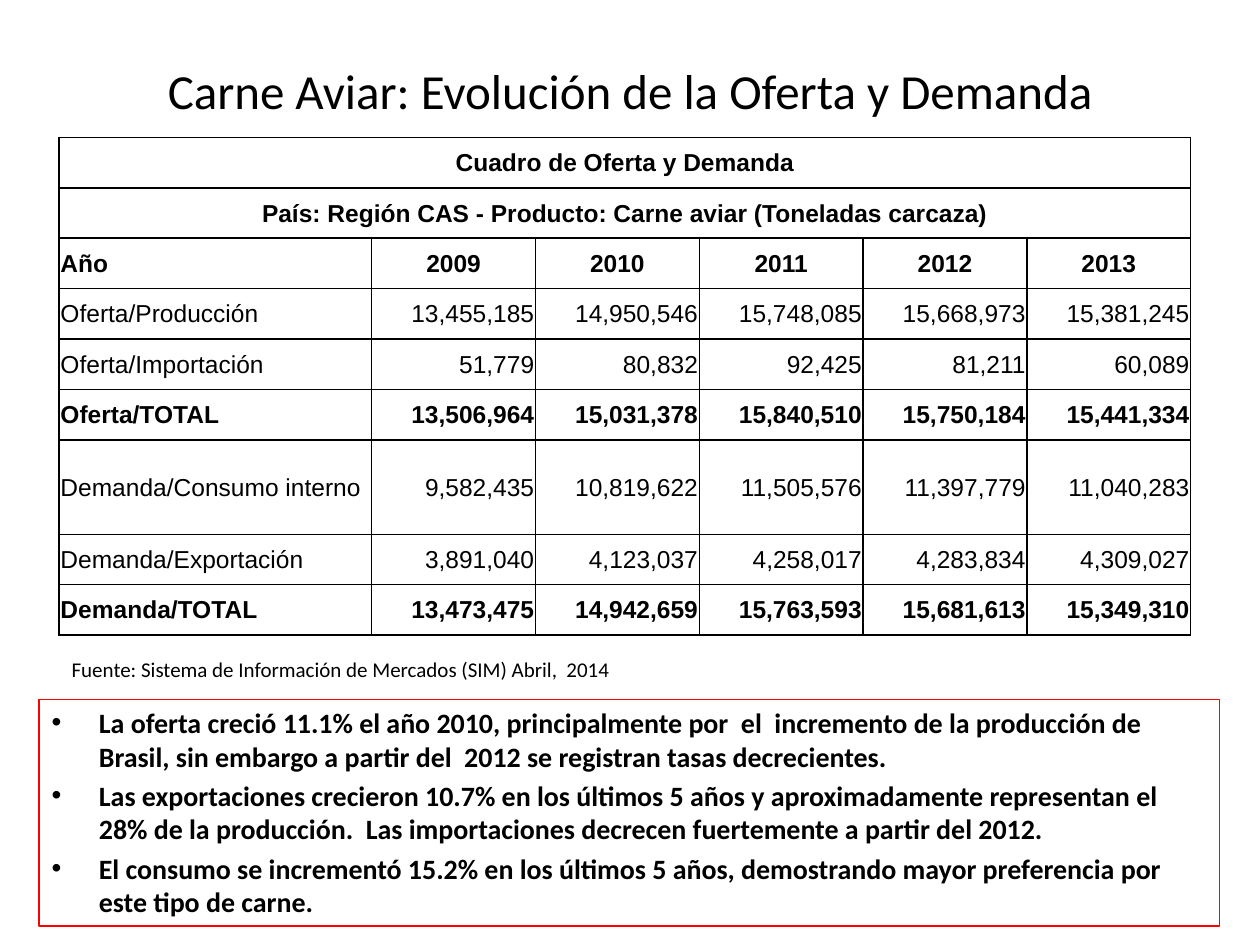
from dataclasses import dataclass

from lxml import etree
from pptx import Presentation
from pptx.dml.color import RGBColor
from pptx.enum.text import MSO_ANCHOR, MSO_AUTO_SIZE, PP_ALIGN
from pptx.oxml.ns import qn
from pptx.util import Inches, Pt

LEFT, CENTER, RIGHT = PP_ALIGN.LEFT, PP_ALIGN.CENTER, PP_ALIGN.RIGHT
MIDDLE = MSO_ANCHOR.MIDDLE
NO_AUTOFIT = MSO_AUTO_SIZE.NONE


@dataclass(frozen=True)
class Theme:
    ink: str = "000000"
    accent: str = "FF0000"
    text_font: str = "Calibri"
    table_font: str = "Arial"
    title_size: int = 28
    body_size: int = 16
    table_size: int = 14
    source_size: int = 12
    border: float = 1
    outline: float = 0.75


THEME = Theme()
TITLE = "Carne Aviar: Evolución de la Oferta y Demanda"
SOURCE = "Fuente: Sistema de Información de Mercados (SIM) Abril,  2014"
FINDINGS = [
    "La oferta creció 11.1% el año 2010, principalmente por  el  incremento de la "
    "producción de Brasil, sin embargo a partir del  2012 se registran tasas decrecientes.",
    "Las exportaciones crecieron 10.7% en los últimos 5 años y aproximadamente representan "
    "el 28% de la producción.  Las importaciones decrecen fuertemente a partir del 2012.",
    "El consumo se incrementó 15.2% en los últimos 5 años, demostrando mayor preferencia "
    "por este tipo de carne.",
]
HEADINGS = [
    "Cuadro de Oferta y Demanda",
    "País: Región CAS - Producto: Carne aviar (Toneladas carcaza)",
]
YEARS = ["Año", 2009, 2010, 2011, 2012, 2013]
SUPPLY_AND_DEMAND = [
    ("Oferta/Producción", 13455185, 14950546, 15748085, 15668973, 15381245),
    ("Oferta/Importación", 51779, 80832, 92425, 81211, 60089),
    ("Oferta/TOTAL", 13506964, 15031378, 15840510, 15750184, 15441334),
    ("Demanda/Consumo interno", 9582435, 10819622, 11505576, 11397779, 11040283),
    ("Demanda/Exportación", 3891040, 4123037, 4258017, 4283834, 4309027),
    ("Demanda/TOTAL", 13473475, 14942659, 15763593, 15681613, 15349310),
]
COLUMN_WIDTHS = [2.48] + [1.3] * 5
ROW_HEIGHTS = [0.4] * 6 + [0.75] + [0.4] * 2
CELL_FORMAT = {
    "margin_left": Inches(0.01),
    "margin_right": Inches(0.01),
    "margin_top": Inches(0.01),
    "margin_bottom": 0,
    "vertical_anchor": MIDDLE,
}


def apply_format(target, values):
    for name, value in values.items():
        setattr(target, name, value)


def place(shape, left, top, width, height):
    box = {"left": left, "top": top, "width": width, "height": height}
    apply_format(shape, {name: Inches(value) for name, value in box.items()})


def write_paragraph(paragraph, text, size, font=THEME.text_font, bold=False, align=None):
    run = paragraph.add_run()
    run.text = text
    apply_format(run.font, {"name": font, "size": Pt(size), "bold": bold})
    run.font.color.rgb = RGBColor.from_string(THEME.ink)
    paragraph.alignment = align


def add_title(slide):
    title = slide.shapes.title
    place(title, 0.5, 0.36, 9, 0.71)
    apply_format(title.text_frame, {"auto_size": NO_AUTOFIT, "vertical_anchor": MIDDLE})
    write_paragraph(title.text_frame.paragraphs[0], TITLE, THEME.title_size, align=CENTER)


def add_findings(slide):
    body = slide.placeholders[1]
    place(body, 0.31, 5.55, 9.37, 1.8)
    body.line.color.rgb = RGBColor.from_string(THEME.accent)
    body.line.width = Pt(THEME.outline)
    frame = body.text_frame
    frame.auto_size = NO_AUTOFIT
    for index, finding in enumerate(FINDINGS):
        paragraph = frame.add_paragraph() if index else frame.paragraphs[0]
        write_paragraph(paragraph, finding, THEME.body_size, bold=True)


def add_source(slide):
    box = slide.shapes.add_textbox(Inches(0.47), Inches(5.16), Inches(8.82), Inches(0.3))
    box.text_frame.word_wrap = True
    write_paragraph(box.text_frame.paragraphs[0], SOURCE, THEME.source_size)


def add_borders(cell):
    properties = cell._tc.get_or_add_tcPr()
    for position, side in enumerate(("a:lnL", "a:lnR", "a:lnT", "a:lnB")):
        line = etree.Element(qn(side), w=str(Pt(THEME.border)))
        fill = etree.SubElement(line, qn("a:solidFill"))
        etree.SubElement(fill, qn("a:srgbClr"), val=THEME.ink)
        properties.insert(position, line)


def write_cell(cell, text, bold, align):
    write_paragraph(cell.text_frame.paragraphs[0], text, THEME.table_size,
                    THEME.table_font, bold, align)


def write_row(table, row, values, bold, align, number_format=""):
    for column, value in enumerate(values):
        text = format(value, number_format) if column else value
        write_cell(table.cell(row, column), text, bold, align if column else LEFT)


def add_supply_table(slide):
    rows, columns = len(ROW_HEIGHTS), len(COLUMN_WIDTHS)
    frame = slide.shapes.add_table(rows, columns, Inches(0.47), Inches(1.09),
                                   Inches(sum(COLUMN_WIDTHS)), Inches(sum(ROW_HEIGHTS)))
    table = frame.table
    apply_format(table, {"first_row": False, "horz_banding": False})
    for column, width in zip(table.columns, COLUMN_WIDTHS):
        column.width = Inches(width)
    for row, height in zip(table.rows, ROW_HEIGHTS):
        row.height = Inches(height)
    for cell in table.iter_cells():
        apply_format(cell, CELL_FORMAT)
        cell.fill.background()
        add_borders(cell)
    for row, heading in enumerate(HEADINGS):
        table.cell(row, 0).merge(table.cell(row, columns - 1))
        write_cell(table.cell(row, 0), heading, True, CENTER)
    year_row = len(HEADINGS)
    write_row(table, year_row, YEARS, True, CENTER)
    for row, values in enumerate(SUPPLY_AND_DEMAND, year_row + 1):
        write_row(table, row, values, values[0].endswith("TOTAL"), RIGHT, ",")


def main():
    presentation = Presentation()
    apply_format(presentation, {"slide_width": Inches(10), "slide_height": Inches(7.5)})
    slide = presentation.slides.add_slide(presentation.slide_layouts[1])
    add_title(slide)
    add_findings(slide)
    add_source(slide)
    add_supply_table(slide)
    presentation.save("out.pptx")


if __name__ == "__main__":
    main()
